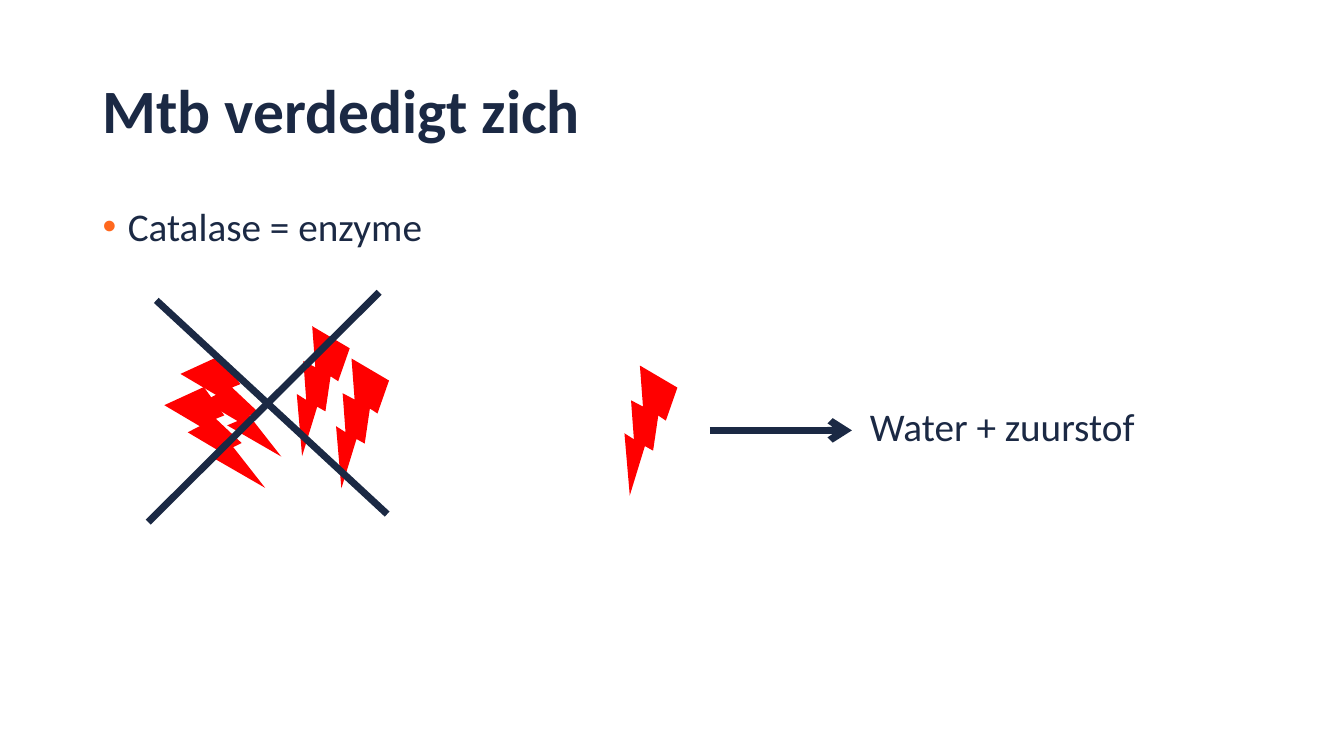
from dataclasses import dataclass

from lxml import etree
from pptx import Presentation
from pptx.dml.color import RGBColor
from pptx.enum import shapes, text
from pptx.oxml import ns
from pptx.util import Inches, Pt


@dataclass(frozen=True)
class Theme:
    font: str = "Calibri"
    ink: str = "1B2944"
    bullet: str = "FF681E"
    bolt: str = "FF0000"
    title_size: int = 44
    body_size: int = 28
    line_width: int = 5


THEME = Theme()
BOLT_SIZE = 1
BOLT_TILT = 55.1


def sub(parent, tag, **attrs):
    return etree.SubElement(parent, ns.qn(tag), attrs)


def add_text(s, box, words, size, bold=False, bullet=False, wrap=True,
             anchor=text.MSO_ANCHOR.TOP, spacing=None):
    tf = s.shapes.add_textbox(*map(Inches, box)).text_frame
    tf.word_wrap = wrap
    tf.vertical_anchor = anchor
    p = tf.paragraphs[0]
    p.text = words
    if spacing:
        p.line_spacing = spacing
    if bullet:
        pPr = p._p.get_or_add_pPr()
        pPr.set("marL", str(Inches(0.25)))
        pPr.set("indent", str(Inches(-0.25)))
        sub(sub(pPr, "a:buClr"), "a:srgbClr", val=THEME.bullet)
        sub(pPr, "a:buFont", typeface="Arial")
        sub(pPr, "a:buChar", char="•")
    font = p.runs[0].font
    font.name = THEME.font
    font.size = Pt(size)
    font.bold = bold
    font.color.rgb = RGBColor.from_string(THEME.ink)
    return tf


def add_bolt(s, left, top, rotation=0):
    sp = s.shapes.add_shape(shapes.MSO_SHAPE.LIGHTNING_BOLT, Inches(left), Inches(top),
                            Inches(BOLT_SIZE), Inches(BOLT_SIZE))
    sp.rotation = rotation
    sp.shadow.inherit = False
    sp.fill.solid()
    sp.fill.fore_color.rgb = RGBColor.from_string(THEME.bolt)
    sp.line.fill.background()


def add_line(s, start, end, arrow=False):
    line = s.shapes.add_connector(shapes.MSO_CONNECTOR.STRAIGHT, *map(Inches, start + end))
    line.line.color.rgb = RGBColor.from_string(THEME.ink)
    line.line.width = Pt(THEME.line_width)
    if arrow:
        sub(line.line._get_or_add_ln(), "a:tailEnd", type="arrow")
    sub(line._element.spPr, "a:effectLst")


def add_heading(s, left, top, width):
    add_text(s, (left, top, width, 1.45), "Mtb verdedigt zich", THEME.title_size,
             bold=True, anchor=text.MSO_ANCHOR.MIDDLE, spacing=0.9)
    add_text(s, (left, top + 1.61, width, 4.67), "Catalase = enzyme", THEME.body_size,
             bullet=True, spacing=0.9)


def add_crossed_bolts(s, left, top, width, height):
    """Four bolts struck out by a cross that fills the box."""
    for dx, dy, rotation in ((0.32, 0.63, 0), (1.15, 0.43, BOLT_TILT),
                             (0.16, 0.94, 0), (1.54, 0.75, BOLT_TILT)):
        add_bolt(s, left + dx, top + dy, rotation)
    inset = 0.08
    right, bottom = left + width, top + height
    add_line(s, (right - inset, top), (left, bottom))
    add_line(s, (left + inset, top + inset), (right, bottom - inset))


def add_reaction(s, left, top):
    """One bolt, an arrow and the products it turns into."""
    add_bolt(s, left, top, BOLT_TILT)
    arrow_y = top + 0.55
    add_line(s, (left + 1.17, arrow_y), (left + 2.58, arrow_y), arrow=True)
    tf = add_text(s, (left + 2.66, top + 0.22, 2.89, 0.57), "Water + zuurstof",
                  THEME.body_size, wrap=False)
    tf.auto_size = text.MSO_AUTO_SIZE.SHAPE_TO_FIT_TEXT


def main():
    prs = Presentation()
    prs.slide_width, prs.slide_height = Inches(13.33), Inches(7.5)
    s = prs.slides.add_slide(prs.slide_layouts[6])
    add_heading(s, 0.92, 0.4, 11.5)
    add_crossed_bolts(s, 1.47, 2.9, 2.37, 2.28)
    add_reaction(s, 5.87, 3.72)
    prs.save("out.pptx")


if __name__ == "__main__":
    main()
